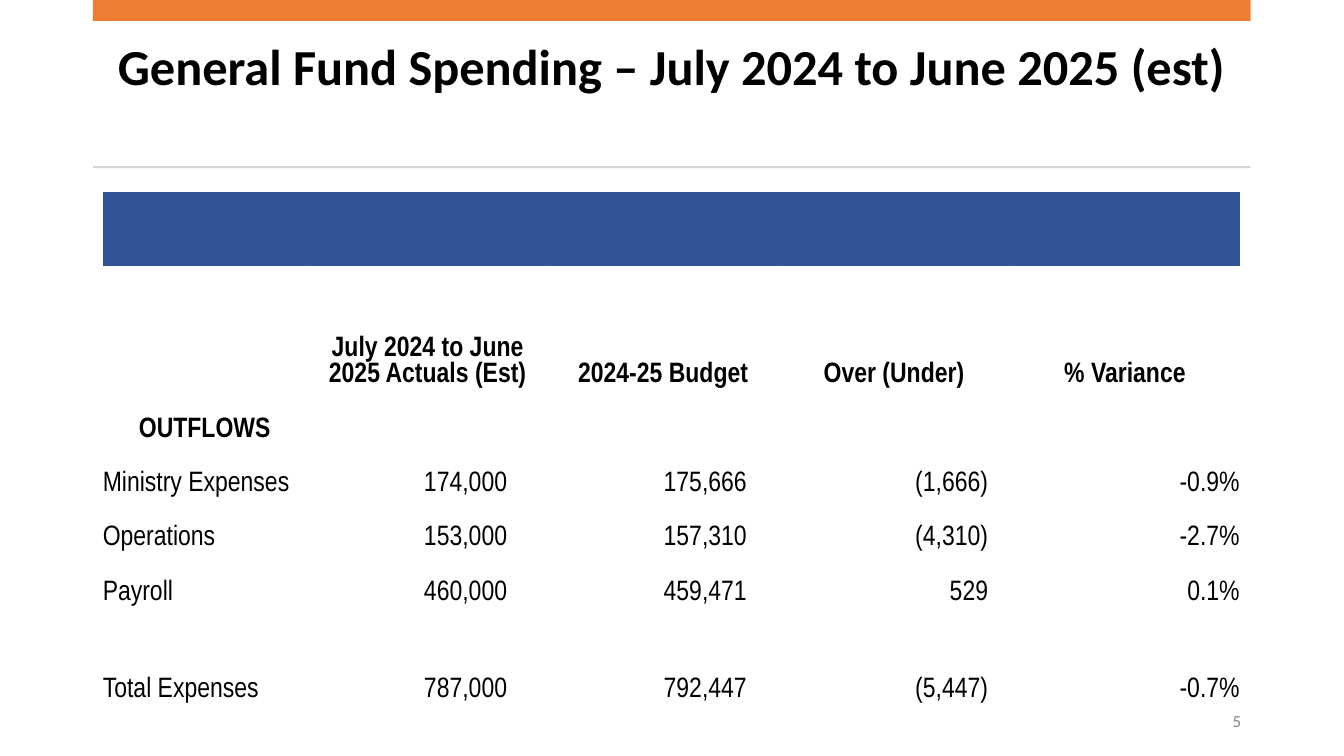
import pptx
import pptx.util
import pptx.dml.color
import pptx.enum.shapes
import pptx.enum.text
from dataclasses import dataclass

Cm, Pt = pptx.util.Cm, pptx.util.Pt
Align = pptx.enum.text.PP_ALIGN
Anchor = pptx.enum.text.MSO_ANCHOR


@dataclass(frozen=True)
class Theme:
    black: str = "000000"
    grey: str = "808080"
    rule: str = "D5D5D5"
    orange: str = "ED7D31"
    blue: str = "305496"
    head: str = "Calibri"
    body: str = "Arial Narrow"
    title: int = 36
    cell: int = 20
    note: int = 12


class Deck:
    def __init__(self, theme):
        self.theme = theme
        self.file = pptx.Presentation()
        self.file.slide_width, self.file.slide_height = Cm(33.87), Cm(19.05)
        self.slide = self.file.slides.add_slide(self.file.slide_layouts[6])

    def paint(self, fill, color):
        fill.solid()
        fill.fore_color.rgb = pptx.dml.color.RGBColor.from_string(color)

    def label(self, frame, text, font, size, color, bold=False, align=Align.LEFT):
        line = frame.paragraphs[0]
        line.alignment = align
        run = line.add_run()
        run.text = text
        run.font.name, run.font.size, run.font.bold = font, Pt(size), bold
        run.font.color.rgb = pptx.dml.color.RGBColor.from_string(color)
        return line

    def bar(self, left, top, width, height, color):
        kind = pptx.enum.shapes.MSO_SHAPE.RECTANGLE
        shape = self.slide.shapes.add_shape(
            kind, Cm(left), Cm(top), Cm(width), Cm(height))
        shape.shadow.inherit = False
        self.paint(shape.fill, color)
        shape.line.fill.background()

    def text(self, left, top, width, height, text, anchor, **style):
        box = self.slide.shapes.add_textbox(
            Cm(left), Cm(top), Cm(width), Cm(height))
        frame = box.text_frame
        frame.word_wrap = True
        frame.vertical_anchor = anchor
        return self.label(frame, text, **style)

    def table(self, left, top, cols, rows):
        frame = self.slide.shapes.add_table(
            len(rows), len(cols), Cm(left), Cm(top), Cm(sum(cols)), Cm(sum(rows)))
        table = frame.table
        table.first_row = table.horz_banding = False
        for col, width in zip(table.columns, cols):
            col.width = Cm(width)
        for row, height in zip(table.rows, rows):
            row.height = Cm(height)
        for cell in table.iter_cells():
            cell.fill.background()
        return table

    def cell(self, cell, text, align, bold=False, right=0.02):
        """Fill one cell; right is its right margin in cm."""
        cell.margin_left = cell.margin_top = Cm(0.02)
        cell.margin_right, cell.margin_bottom = Cm(right), 0
        cell.vertical_anchor = Anchor.BOTTOM
        self.label(cell.text_frame, text, self.theme.body, self.theme.cell,
                   self.theme.black, bold, align)


HEADS = ["July 2024 to June 2025 Actuals (Est)", "2024-25 Budget",
         "Over (Under)", "% Variance"]
COSTS = [
    ("Ministry Expenses", "174,000", "175,666", "(1,666)", "-0.9%"),
    ("Operations", "153,000", "157,310", "(4,310)", "-2.7%"),
    ("Payroll", "460,000", "459,471", "529", "0.1%"),
    ("Total Expenses", "787,000", "792,447", "(5,447)", "-0.7%"),
]
MARGINS = [0.02, 1.02, 0.8, 0.54, 0.02]


def main():
    theme = Theme()
    deck = Deck(theme)
    left, width = 2.34, 29.18

    title = deck.text(left, 0.94, width, 3,
                      "General Fund Spending – July 2024 to June 2025 (est)",
                      Anchor.TOP, font=theme.head, size=theme.title,
                      color=theme.black, bold=True, align=Align.CENTER)
    title.line_spacing = 0.9
    deck.bar(left, 0, width, 0.53, theme.orange)
    deck.bar(left, 4.19, width, 0.05, theme.rule)
    deck.text(24.21, 17.65, 7.32, 1.02, "5", Anchor.MIDDLE, font=theme.head,
              size=theme.note, color=theme.grey, align=Align.RIGHT)

    table = deck.table(2.57, 4.83, [5.18, 6.05] + [5.82] * 3,
                       [1.88] + [1.37] * 6 + [2.46])
    table.cell(0, 0).merge(table.cell(0, 4))
    deck.paint(table.cell(0, 0).fill, theme.blue)
    for col, head in enumerate(HEADS, 1):
        deck.cell(table.cell(2, col), head, Align.CENTER, bold=True)
    deck.cell(table.cell(3, 0), "OUTFLOWS", Align.CENTER, bold=True)
    for row, cost in enumerate(COSTS, 4):
        for col, text in enumerate(cost):
            align = Align.RIGHT if col else Align.LEFT
            deck.cell(table.cell(row, col), text, align, right=MARGINS[col])

    deck.file.save("out.pptx")


if __name__ == "__main__":
    main()
